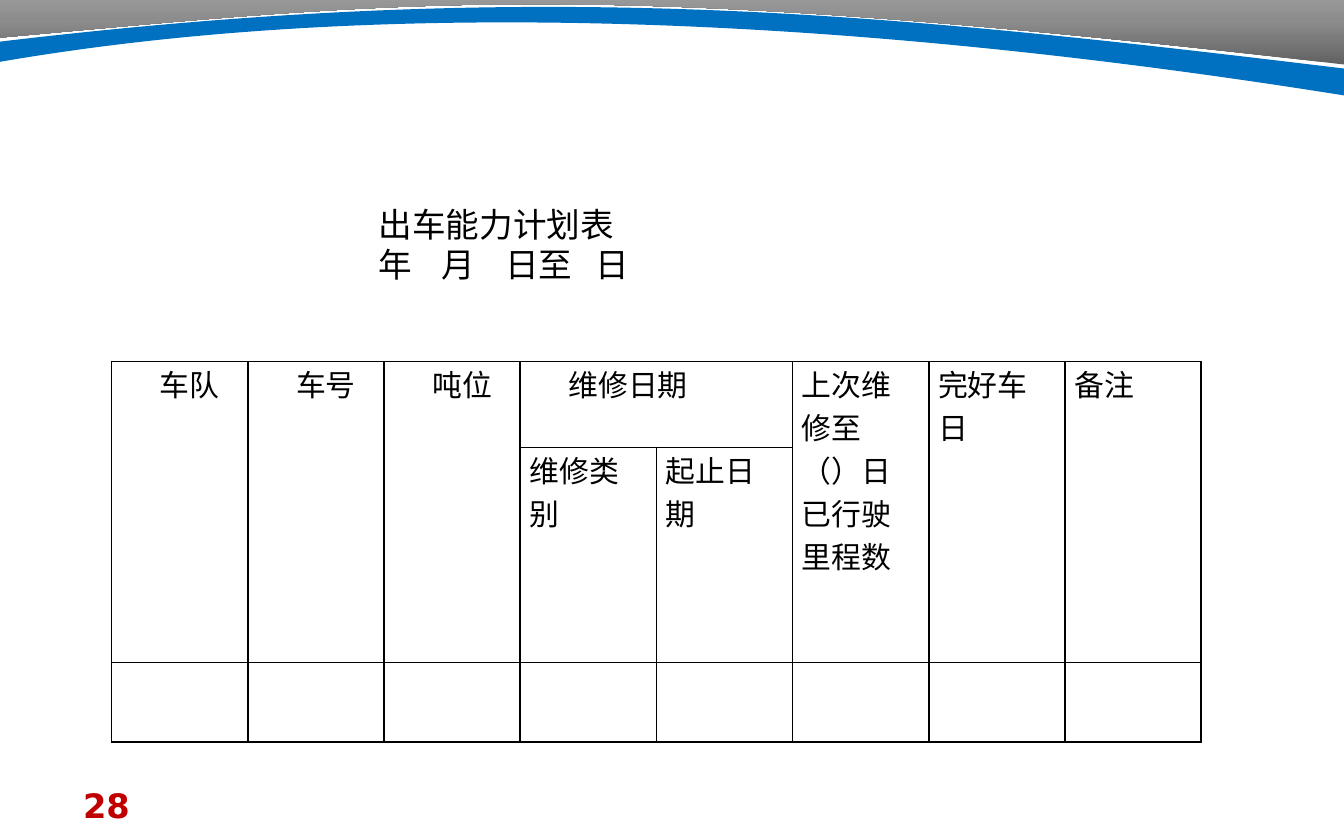
from copy import deepcopy
from lxml import etree
from pptx import Presentation, util as u
from pptx.dml import color
from pptx.oxml import ns

deck = Presentation()
deck.slide_width, deck.slide_height = u.Inches(10), u.Inches(6.25)
W, H = deck.slide_width, deck.slide_height
slide = deck.slides.add_slide(deck.slide_layouts[6])


def paint(target, value):
    target.rgb = color.RGBColor.from_string(value)


def curved_band(points, curve_starts):
    builder = slide.shapes.build_freeform(*points[0], scale=W / 1000)
    builder.add_line_segments(points[1:], close=True)
    band = builder.convert_to_shape()
    band.shadow.inherit = False
    band.line.fill.background()
    segments = list(band._element.spPr.iter(ns.qn("a:lnTo")))
    for start in curve_starts:
        curve = etree.Element(ns.qn("a:cubicBezTo"))
        segments[start].addprevious(curve)
        for segment in segments[start:start + 3]:
            curve.append(segment[0])
            segment.getparent().remove(segment)
    return band


grey_band = curved_band(
    [(1000, 48), (443, -17), (308, 0), (0, 28), (0, 19), (0, -2), (1000, -2), (1000, 48)], [0])
grey_band.fill.gradient()
grey_band.fill.gradient_angle = 90
stops = grey_band._element.spPr.find(".//" + ns.qn("a:gsLst"))
stops.insert(1, deepcopy(stops[0]))
for stop, position, shade in zip(grey_band.fill.gradient_stops, (0, 0.5, 1), ("626262", "8C8C8C", "A6A6A6")):
    stop.position = position
    paint(stop.color, shade)

blue_band = curved_band(
    [(0, 31), (403, -17), (652, 9), (1000, 51), (1000, 71), (605, 8), (267, 0), (0, 46), (0, 31)], [0, 4])
blue_band.fill.solid()
paint(blue_band.fill.fore_color, "0070C0")

columns, row_shares = 8, (0.64, 1.6, 0.59)
column_width = u.Inches(8.11) // columns
plan = slide.shapes.add_table(
    3, columns, u.Inches(0.83), u.Inches(2.69), column_width * columns, u.Inches(sum(row_shares))).table
plan.first_row = plan.horz_banding = False
for column in plan.columns:
    column.width = column_width
for row, share in zip(plan.rows, row_shares):
    row.height = u.Inches(share)

for cell in plan.iter_cells():
    borders = cell._tc.get_or_add_tcPr()
    for side in ("a:lnL", "a:lnR", "a:lnT", "a:lnB"):
        border = etree.SubElement(borders, ns.qn(side), w=str(u.Pt(1)))
        ink = etree.SubElement(border, ns.qn("a:solidFill"))
        etree.SubElement(ink, ns.qn("a:srgbClr"), val="000000")
    cell.fill.background()
    cell.margin_left = cell.margin_right = u.Inches(0.07)
    cell.margin_top = cell.margin_bottom = 0

for column in (0, 1, 2, 5, 6, 7):
    plan.cell(0, column).merge(plan.cell(1, column))
plan.cell(0, 3).merge(plan.cell(0, 4))

headings = {
    (0, 0): "车队", (0, 1): "车号", (0, 2): "吨位", (0, 3): "维修日期",
    (0, 5): "上次维修至（）日已行驶里程数", (0, 6): "完好车日", (0, 7): "备注",
    (1, 3): "维修类别", (1, 4): "起止日期",
}
for (row, column), heading in headings.items():
    paragraph = plan.cell(row, column).text_frame.paragraphs[0]
    paragraph.text = heading
    paragraph.space_after = u.Pt(6)
    if row == 0 and column < 4:
        paragraph._p.get_or_add_pPr().set("indent", str(u.Inches(0.29)))
    font = paragraph.runs[0].font
    font.size, font.name = u.Pt(16), "Calibri"
    paint(font.color, "000000")

title = slide.shapes.add_textbox(u.Inches(2.72), u.Inches(1.47), W // 2, u.Inches(0.71)).text_frame
title.word_wrap = True
title.text = "出车能力计划表\n年\t月\t日至\t日"
for paragraph in title.paragraphs:
    paragraph.line_spacing = u.Pt(21.5)
    for run in paragraph.runs:
        run.font.size, run.font.name = u.Pt(18), "Noto Sans CJK SC"
        paint(run.font.color, "000000")
tabs = etree.SubElement(title.paragraphs[1]._p.get_or_add_pPr(), ns.qn("a:tabLst"))
for stop in (0.47, 0.94, 1.61):
    etree.SubElement(tabs, ns.qn("a:tab"), pos=str(u.Inches(stop)), algn="l")

page_number = slide.shapes.add_textbox(u.Inches(0.52), u.Inches(5.79), u.Inches(2.33), u.Inches(0.33)).text_frame
page_number.word_wrap = True
page_number.text = "28"
font = page_number.paragraphs[0].runs[0].font
font.size, font.name, font.bold = u.Pt(18), "DejaVu Sans", True
paint(font.color, "C00000")

deck.save("out.pptx")
